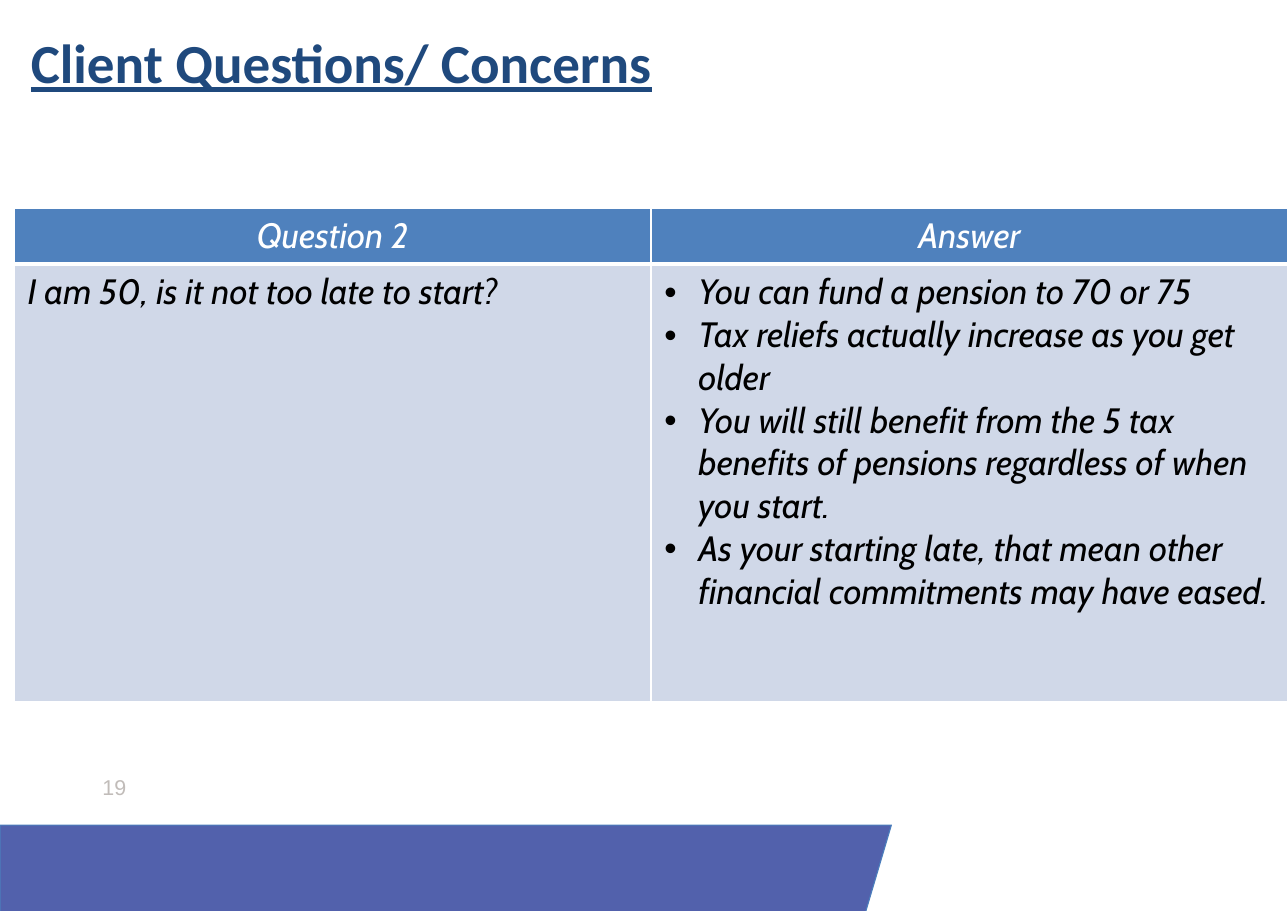
"""Build the client question and answer slide."""
from dataclasses import dataclass

from lxml import etree
from pptx import Presentation
from pptx.dml.color import RGBColor
from pptx.enum.text import MSO_ANCHOR, MSO_AUTO_SIZE, PP_ALIGN
from pptx.oxml.ns import qn
from pptx.util import Inches, Pt

LEFT, CENTER = PP_ALIGN.LEFT, PP_ALIGN.CENTER
TOP = MSO_ANCHOR.TOP
NO_FIT = MSO_AUTO_SIZE.NONE
TITLE_ONLY = 5


@dataclass(frozen=True)
class Theme:
    """Colours and type formats of the slide."""
    band: str = "5261AC"
    band_line: str = "4B7EBC"
    number: str = "C1BCB9"
    title: str = "1F497D"
    header: str = "4F81BD"
    body: str = "D0D8E8"
    white: str = "FFFFFF"
    black: str = "000000"
    title_size: int = 36
    table_size: int = 23
    number_size: int = 14


@dataclass(frozen=True)
class CellSpec:
    """Content and look of one table cell."""
    lines: tuple[str, ...]
    fill: str
    color: str
    align: PP_ALIGN = LEFT
    bulleted: bool = False
    bottom: int = 1


THEME = Theme()
ROWS = (
    (CellSpec(("Question 2",), THEME.header, THEME.white, CENTER, bottom=3),
     CellSpec(("Answer",), THEME.header, THEME.white, CENTER, bottom=3)),
    (CellSpec(("I am 50, is it not too late to start?",), THEME.body, THEME.black),
     CellSpec(("You can fund a pension to 70 or 75",
               "Tax reliefs actually increase as you get older",
               "You will still benefit from the 5 tax benefits of pensions "
               "regardless of when you start.",
               "As your starting late, that mean other financial commitments "
               "may have eased."), THEME.body, THEME.black, bulleted=True)),
)


def assign(target, values: dict) -> None:
    """Set each named attribute on the target."""
    for name, value in values.items():
        setattr(target, name, value)


def write(p, text: str, color: str, **font) -> None:
    """Add one formatted run to a paragraph."""
    r = p.add_run()
    r.text = text
    assign(r.font, font)
    r.font.color.rgb = RGBColor.from_string(color)


def frame(tf, wrap: bool) -> None:
    """Give a text frame the slide's insets and top anchor."""
    assign(tf, dict(margin_left=Inches(0.11), margin_right=Inches(0.11),
                    margin_top=Inches(0.06), margin_bottom=Inches(0.06),
                    vertical_anchor=TOP, auto_size=NO_FIT, word_wrap=wrap))


def add_title(s) -> None:
    """Place and format the title."""
    sp = s.shapes.title
    assign(sp, dict(left=Inches(0.17), top=Inches(0.2),
                    width=Inches(9.94), height=Inches(1.38)))
    frame(sp.text_frame, True)
    p = sp.text_frame.paragraphs[0]
    p.alignment = LEFT
    write(p, "Client Questions/ Concerns", THEME.title, name="Calibri",
          size=Pt(THEME.title_size), bold=True, underline=True)


def add_footer(s) -> None:
    """Draw the slanted band and the page number."""
    builder = s.shapes.build_freeform(0, Inches(7.49))
    corners = ((8.09, 7.49), (7.85, 8.3), (0, 8.3))
    builder.add_line_segments([(Inches(x), Inches(y)) for x, y in corners])
    sp = builder.convert_to_shape()
    sp.shadow.inherit = False
    sp.fill.solid()
    sp.fill.fore_color.rgb = RGBColor.from_string(THEME.band)
    sp.line.color.rgb = RGBColor.from_string(THEME.band_line)
    sp.line.width = Pt(0.75)
    box = s.shapes.add_textbox(Inches(0.82), Inches(6.97), Inches(0.47), Inches(0.35))
    frame(box.text_frame, False)
    write(box.text_frame.paragraphs[0], "19", THEME.number,
          name="Arial", size=Pt(THEME.number_size))


def add_bullet(p) -> None:
    """Give a paragraph a hanging bullet."""
    pPr = p._p.get_or_add_pPr()
    pPr.set("marL", str(Inches(0.31)))
    pPr.set("indent", str(-Inches(0.31)))
    etree.SubElement(pPr, qn("a:buFont")).set("typeface", "Arial")
    etree.SubElement(pPr, qn("a:buChar")).set("char", "•")


def add_borders(cell, bottom: int) -> None:
    """Draw white lines on the four sides of a cell."""
    tcPr = cell._tc.get_or_add_tcPr()
    widths = {"lnL": 1, "lnR": 1, "lnT": 1, "lnB": bottom}
    for i, (side, width) in enumerate(widths.items()):
        ln = etree.Element(qn(f"a:{side}"), w=str(Pt(width)))
        fill = etree.SubElement(ln, qn("a:solidFill"))
        etree.SubElement(fill, qn("a:srgbClr")).set("val", THEME.white)
        tcPr.insert(i, ln)


def fill_cell(cell, spec: CellSpec) -> None:
    """Write and format one table cell."""
    assign(cell, dict(margin_left=Inches(0.12), margin_right=Inches(0.12),
                      margin_top=Inches(0.06), margin_bottom=Inches(0.06),
                      vertical_anchor=TOP))
    cell.fill.solid()
    cell.fill.fore_color.rgb = RGBColor.from_string(spec.fill)
    add_borders(cell, spec.bottom)
    tf = cell.text_frame
    for i, line in enumerate(spec.lines):
        p = tf.add_paragraph() if i else tf.paragraphs[0]
        p.alignment = spec.align
        if spec.bulleted:
            add_bullet(p)
        write(p, line, spec.color, name="Cabin", size=Pt(THEME.table_size),
              bold=False, italic=True)


def add_question_table(s) -> None:
    """Add the question and answer table."""
    table = s.shapes.add_table(2, 2, Inches(0.13), Inches(1.89),
                               Inches(11.56), Inches(4.47)).table
    for row, height, specs in zip(table.rows, (0.5, 3.97), ROWS):
        row.height = Inches(height)
        for cell, spec in zip(row.cells, specs):
            fill_cell(cell, spec)


def main() -> None:
    """Build and save the presentation."""
    prs = Presentation()
    assign(prs, dict(slide_width=Inches(11.69), slide_height=Inches(8.27)))
    s = prs.slides.add_slide(prs.slide_layouts[TITLE_ONLY])
    add_footer(s)
    add_title(s)
    add_question_table(s)
    prs.save("out.pptx")


if __name__ == "__main__":
    main()
